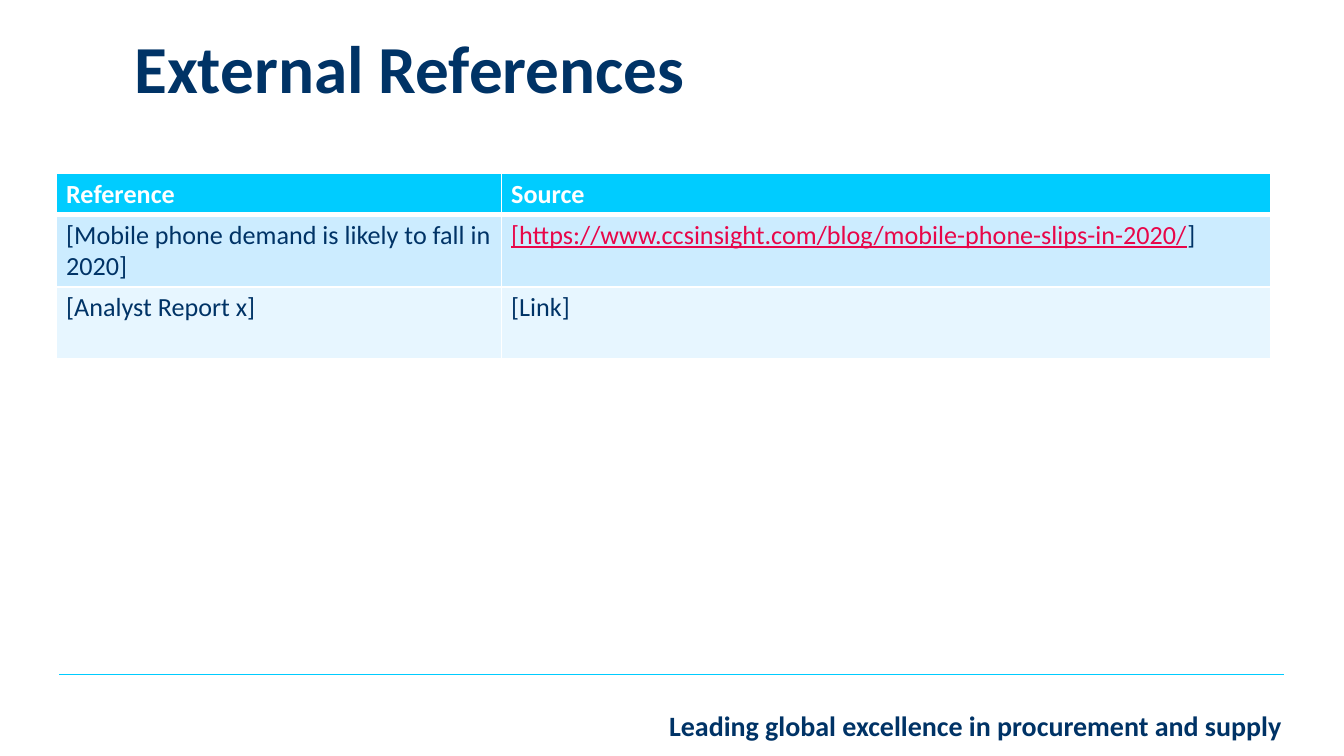
from lxml import etree
from pptx import Presentation
from pptx.dml.color import RGBColor
from pptx.enum import shapes, text
from pptx.oxml import ns
from pptx.util import Cm, Pt

NAVY, CYAN, WHITE, PINK = "003366", "00CCFF", "FFFFFF", "E80649"
TITLE = "External References"
MOTTO = "Leading global excellence in procurement and supply"
REFERENCES = [
    [[("Reference", WHITE)], [("Source", WHITE)]],
    [[("[Mobile phone demand is likely to fall in 2020]", NAVY)],
     [("[https://www.ccsinsight.com/blog/mobile-phone-slips-in-2020/", PINK),
      ("]", NAVY)]],
    [[("[Analyst Report x]", NAVY)], [("[Link]", NAVY)]],
]
ROW_FILLS = [CYAN, "CCECFF", "E7F6FF"]
ROW_HEIGHTS = [0.76, 1.36, 1.36]
COLUMN_WIDTHS = [8.41, 14.54]


def rgb(value):
    return RGBColor.from_string(value)


def style(run, size, color, bold):
    font = run.font
    font.name, font.size, font.bold = "Calibri", Pt(size), bold
    font.color.rgb = rgb(color)


def write(frame, content, size, anchor):
    frame.word_wrap = True
    frame.vertical_anchor = anchor
    frame.text = content
    paragraph = frame.paragraphs[0]
    style(paragraph.runs[0], size, NAVY, True)
    return paragraph


def add_border(cell, side, width):
    border = etree.SubElement(cell._tc.get_or_add_tcPr(), ns.qn(f"a:{side}"),
                              w=str(Pt(width)))
    fill = etree.SubElement(border, ns.qn("a:solidFill"))
    etree.SubElement(fill, ns.qn("a:srgbClr"), val=WHITE)


def fill_cell(cell, runs, row):
    for side in ("lnL", "lnR", "lnT", "lnB"):
        header_rule = (row, side) in ((0, "lnB"), (1, "lnT"))
        add_border(cell, side, 3 if header_rule else 1)
    cell.fill.solid()
    cell.fill.fore_color.rgb = rgb(ROW_FILLS[row])
    cell.margin_left = cell.margin_right = Cm(0.18)
    cell.margin_top = cell.margin_bottom = Cm(0.09)
    paragraph = cell.text_frame.paragraphs[0]
    for content, color in runs:
        run = paragraph.add_run()
        run.text = content
        style(run, 14, color, row == 0)
        run.font.underline = color == PINK


def main():
    deck = Presentation()
    deck.slide_width, deck.slide_height = Cm(25.4), Cm(14.29)
    slide = deck.slides.add_slide(deck.slide_layouts[6])

    footer = slide.shapes.add_shape(shapes.MSO_SHAPE.RECTANGLE,
                                    Cm(8.94), Cm(13.26), Cm(15.54), Cm(0.89))
    footer.shadow.inherit = False
    footer.fill.solid()
    footer.fill.fore_color.rgb = rgb(WHITE)
    footer.line.fill.background()
    motto = write(footer.text_frame, MOTTO, 15, text.MSO_ANCHOR.MIDDLE)
    motto.alignment = text.PP_ALIGN.RIGHT

    rule = slide.shapes.add_connector(shapes.MSO_CONNECTOR.STRAIGHT,
                                      Cm(1.12), Cm(12.75), Cm(24.26), Cm(12.75))
    rule.line.color.rgb = rgb(CYAN)
    rule.line.width = Pt(1)
    etree.SubElement(rule._element.spPr, ns.qn("a:effectLst"))

    heading = slide.shapes.add_textbox(Cm(2.54), Cm(0.76), Cm(21.11), Cm(2.77))
    frame = heading.text_frame
    frame.margin_left = frame.margin_right = 0
    frame.margin_top = frame.margin_bottom = 0
    title = write(frame, TITLE, 36, text.MSO_ANCHOR.TOP)
    title.line_spacing = Pt(36)

    table = slide.shapes.add_table(
        len(REFERENCES), len(COLUMN_WIDTHS), Cm(1.07), Cm(3.28),
        Cm(sum(COLUMN_WIDTHS)), Cm(sum(ROW_HEIGHTS))).table
    for column, width in zip(table.columns, COLUMN_WIDTHS):
        column.width = Cm(width)
    for row, (reference, height) in enumerate(zip(REFERENCES, ROW_HEIGHTS)):
        table.rows[row].height = Cm(height)
        for column, runs in enumerate(reference):
            fill_cell(table.cell(row, column), runs, row)

    deck.save("out.pptx")


if __name__ == "__main__":
    main()
